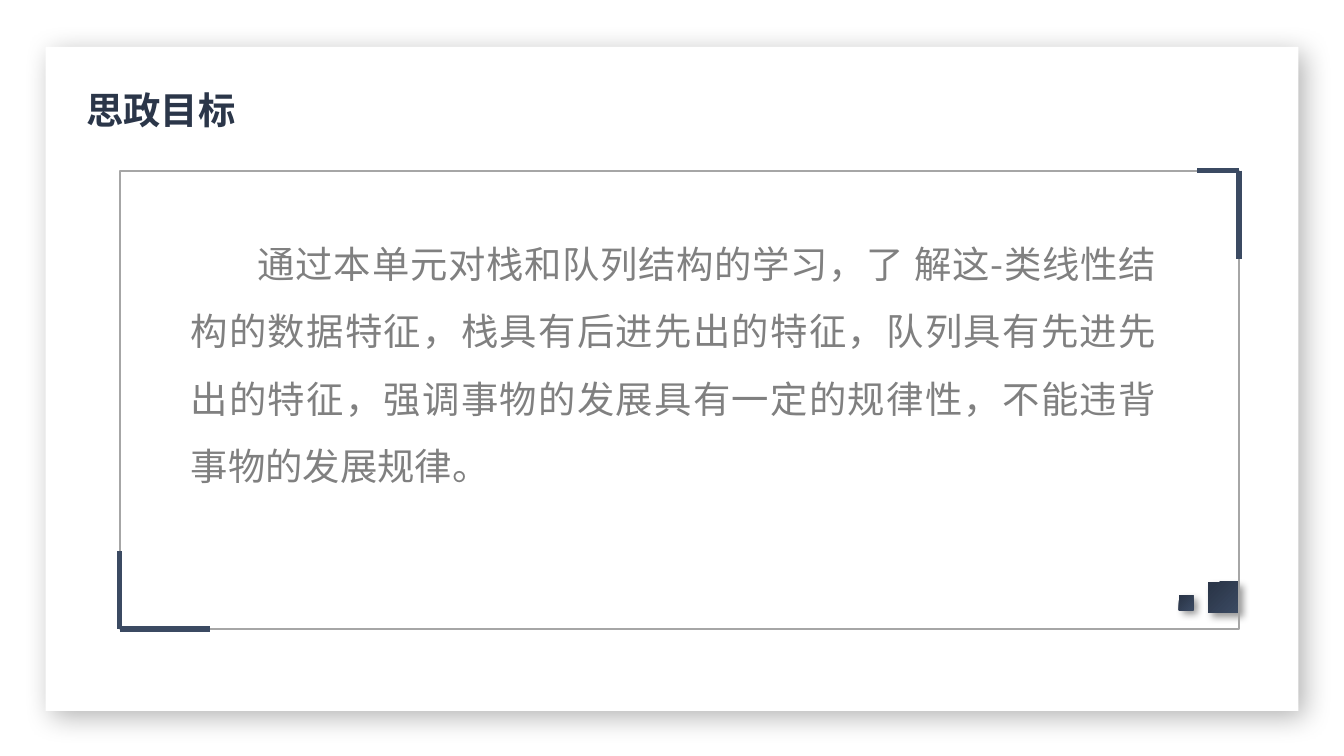
from lxml import etree
from pptx import Presentation
from pptx.dml.color import RGBColor
from pptx.enum import shapes, text
from pptx.oxml import ns
from pptx.util import Inches, Pt

FONT = "Noto Sans CJK SC"
WHITE = RGBColor(0xFF, 0xFF, 0xFF)
NAVY = RGBColor(0x2B, 0x36, 0x49)
SLATE = RGBColor(0x3B, 0x4A, 0x62)
FRAME_GRAY = RGBColor(0xA6, 0xA6, 0xA6)
TEXT_GRAY = RGBColor(0x80, 0x80, 0x80)

TITLE = "思政目标"
BODY = (
    "通过本单元对栈和队列结构的学习，了 解这-类线性结 构的数据特征，"
    "栈具有后进先出的特征，队列具有先进先出的特征，"
    "强调事物的发展具有一定的规律性，不能违背事物的发展规律。"
)


def add_rect(parent, x, y, w, h):
    sp = parent.add_shape(shapes.MSO_SHAPE.RECTANGLE,
                          Inches(x), Inches(y), Inches(w), Inches(h))
    sp.shadow.inherit = False
    return sp


def set_shadow(sp, opacity, blur, distance):
    """Cast a black outer shadow to the lower right; blur and distance in points."""
    effects = sp._element.spPr.find(ns.qn("a:effectLst"))
    shadow = etree.SubElement(
        effects, ns.qn("a:outerShdw"), blurRad=str(Pt(blur)),
        dist=str(Pt(distance)), dir="2700000", algn="tl", rotWithShape="0")
    color = etree.SubElement(shadow, ns.qn("a:srgbClr"), val="000000")
    etree.SubElement(color, ns.qn("a:alpha"), val=str(opacity * 1000))


def format_run(r, color, bold=False):
    r.font.name = FONT
    r.font.size = Pt(20)
    r.font.bold = bold
    r.font.color.rgb = color
    etree.SubElement(r.font._element, ns.qn("a:ea"), typeface=FONT)


def add_card(s, x, y, w, h):
    sp = add_rect(s.shapes, x, y, w, h)
    sp.fill.solid()
    sp.fill.fore_color.rgb = WHITE
    sp.line.fill.background()
    set_shadow(sp, 30, 15, 5)


def add_title(s, x, y, w, h):
    tf = s.shapes.add_textbox(Inches(x), Inches(y), Inches(w), Inches(h)).text_frame
    tf.margin_left = tf.margin_top = tf.margin_right = 0
    tf.word_wrap = False
    tf.auto_size = text.MSO_AUTO_SIZE.SHAPE_TO_FIT_TEXT
    tf.text = TITLE
    p = tf.paragraphs[0]
    p.line_spacing = Pt(27)
    format_run(p.runs[0], NAVY, bold=True)


def add_body(s, x, y, w, h):
    tf = s.shapes.add_textbox(Inches(x), Inches(y), Inches(w), Inches(h)).text_frame
    tf.word_wrap = True
    tf.auto_size = text.MSO_AUTO_SIZE.SHAPE_TO_FIT_TEXT
    tf.text = BODY
    p = tf.paragraphs[0]
    p.alignment = text.PP_ALIGN.JUSTIFY
    p.line_spacing = 1.5
    p._p.get_or_add_pPr().set("indent", str(Inches(0.5)))
    format_run(p.runs[0], TEXT_GRAY)


def add_frame(s, x, y, w, h):
    """Thin frame with thick accents at its lower left and upper right corners."""
    group = s.shapes.add_group_shape().shapes
    sp = add_rect(group, x, y, w, h)
    sp.fill.background()
    sp.line.color.rgb = FRAME_GRAY
    sp.line.width = Pt(1)

    lower_left, upper_right = (x, y + h), (x + w, y)
    for (cx, cy), dx, dy in (
        (lower_left, 0.67, 0),
        (lower_left, 0, -0.58),
        (upper_right, 0, 0.66),
        (upper_right, -0.31, 0),
    ):
        accent = group.add_connector(
            shapes.MSO_CONNECTOR.STRAIGHT,
            Inches(cx), Inches(cy), Inches(cx + dx), Inches(cy + dy))
        accent.line.color.rgb = SLATE
        accent.line.width = Pt(3)
        etree.SubElement(accent._element.spPr, ns.qn("a:effectLst"))


def add_square(s, x, y, size):
    sp = add_rect(s.shapes, x, y, size, size)
    sp.fill.gradient()
    sp.fill.gradient_angle = 315
    for stop, position, color in zip(sp.fill.gradient_stops, (0.11, 1), (NAVY, SLATE)):
        stop.position = position
        stop.color.rgb = color
    sp.line.fill.background()
    set_shadow(sp, 40, 4, 3)


def main():
    prs = Presentation()
    prs.slide_width = Inches(10)
    prs.slide_height = Inches(10 * 9 / 16)
    s = prs.slides.add_slide(prs.slide_layouts[6])
    add_card(s, 0.34, 0.35, 9.32, 4.94)
    add_square(s, 8.99, 4.33, 0.23)
    add_body(s, 1.32, 1.58, 7.38, 2.06)
    add_title(s, 0.64, 0.61, 1.12, 0.4)
    add_frame(s, 0.89, 1.27, 8.33, 3.41)
    add_square(s, 8.77, 4.43, 0.11)
    prs.save("out.pptx")


if __name__ == "__main__":
    main()
